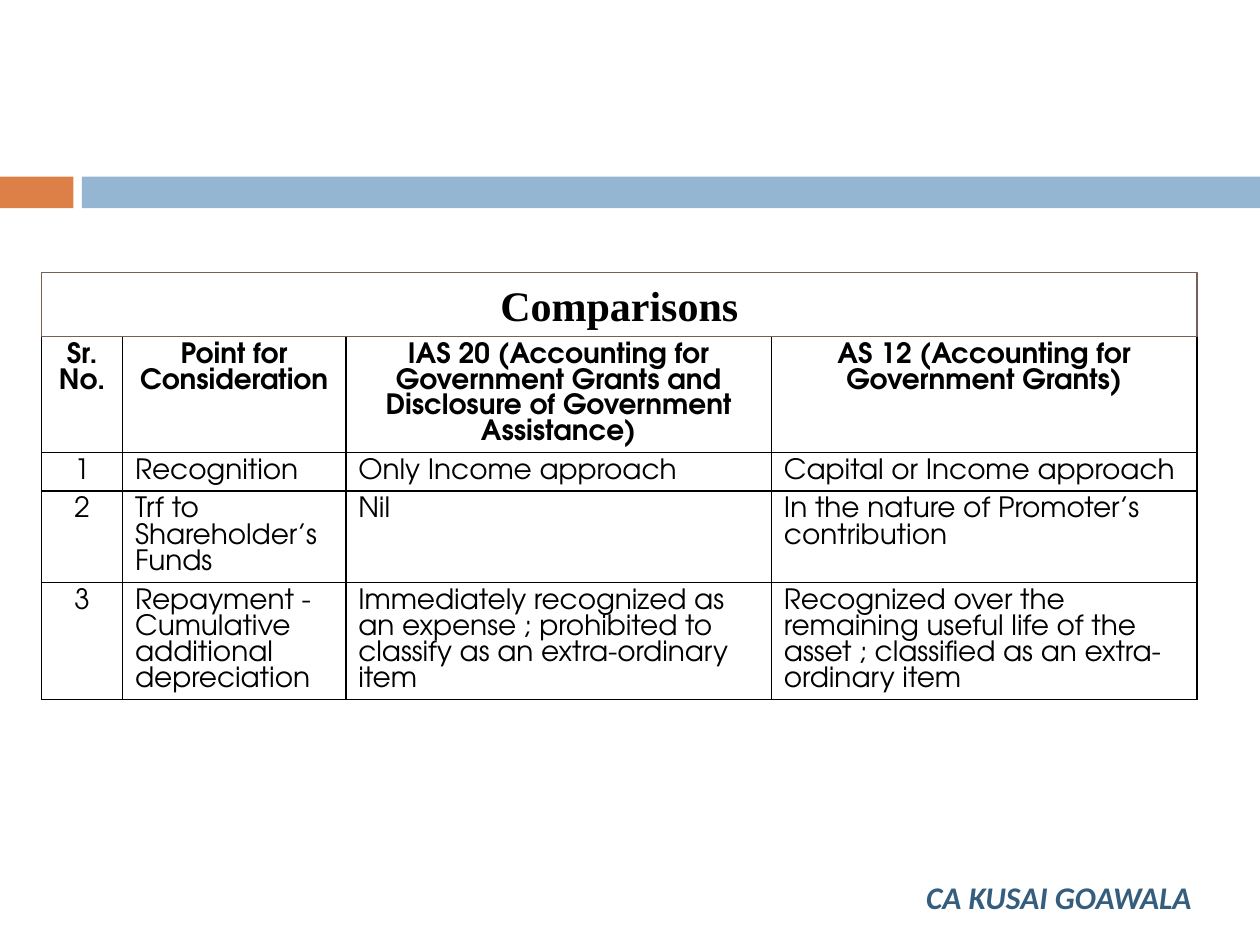
"""Build a slide comparing two standards on government grants."""
import dataclasses

import lxml.etree
import pptx
import pptx.dml.color
import pptx.enum.shapes
import pptx.enum.text
import pptx.oxml.ns
import pptx.util

Cm = pptx.util.Cm
Pt = pptx.util.Pt
ALIGN = pptx.enum.text.PP_ALIGN


@dataclasses.dataclass(frozen=True)
class Theme:
    orange: str = "DD8047"
    blue: str = "94B6D2"
    brown: str = "775F55"
    navy: str = "355D7E"
    black: str = "000000"
    head_font: str = "Times New Roman"
    grid_font: str = "TeX Gyre Adventor"
    foot_font: str = "Calibri"
    head_size: int = 24
    grid_size: int = 16
    foot_size: int = 18
    edge: float = 0.75
    rule: float = 1


def paint(code):
    return pptx.dml.color.RGBColor.from_string(code)


def write(frame, text, font, size, color, bold=False, slant=False, align=ALIGN.LEFT):
    frame.word_wrap = True
    line = frame.paragraphs[0]
    line.alignment = align
    run = line.add_run()
    run.text = text
    run.font.name = font
    run.font.size = Pt(size)
    run.font.bold = bold
    run.font.italic = slant
    run.font.color.rgb = paint(color)


class Board:
    def __init__(self, slide, theme):
        self.slide = slide
        self.theme = theme

    def rect(self, left, top, width, height, fill=None, line=None):
        shape = self.slide.shapes.add_shape(
            pptx.enum.shapes.MSO_SHAPE.RECTANGLE, Cm(left), Cm(top), Cm(width), Cm(height))
        shape.shadow.inherit = False
        if fill:
            shape.fill.solid()
            shape.fill.fore_color.rgb = paint(fill)
        else:
            shape.fill.background()
        if line:
            shape.line.color.rgb = paint(line)
            shape.line.width = Pt(self.theme.edge)
        else:
            shape.line.fill.background()
        return shape

    def label(self, left, top, width, height, text, **style):
        box = self.slide.shapes.add_textbox(Cm(left), Cm(top), Cm(width), Cm(height))
        write(box.text_frame, text, **style)

    def border(self, cell):
        props = cell._tc.get_or_add_tcPr()
        for side in ("lnL", "lnR", "lnT", "lnB"):
            line = lxml.etree.SubElement(
                props, pptx.oxml.ns.qn(f"a:{side}"), w=str(Pt(self.theme.rule)))
            fill = lxml.etree.SubElement(line, pptx.oxml.ns.qn("a:solidFill"))
            lxml.etree.SubElement(fill, pptx.oxml.ns.qn("a:srgbClr"), val=self.theme.black)

    def grid(self, left, top, widths, heights, rows):
        theme = self.theme
        table = self.slide.shapes.add_table(
            len(rows), len(widths), Cm(left), Cm(top), Cm(sum(widths)), Cm(sum(heights))).table
        for col, width in zip(table.columns, widths):
            col.width = Cm(width)
        for r, (row, height) in enumerate(zip(rows, heights)):
            table.rows[r].height = Cm(height)
            for c, text in enumerate(row):
                cell = table.cell(r, c)
                self.border(cell)
                cell.fill.background()
                write(cell.text_frame, text, font=theme.grid_font, size=theme.grid_size,
                      color=theme.black, bold=r == 0,
                      align=ALIGN.CENTER if r == 0 or c == 0 else ALIGN.LEFT)


ROWS = [
    ("Sr. No.", "Point for Consideration",
     "IAS 20 (Accounting for Government Grants and Disclosure of Government Assistance)",
     "AS 12 (Accounting for Government Grants)"),
    ("1", "Recognition", "Only Income approach", "Capital or Income approach"),
    ("2", "Trf to Shareholder’s Funds", "Nil", "In the nature of Promoter’s contribution"),
    ("3", "Repayment - Cumulative additional depreciation",
     "Immediately recognized as an expense ; prohibited to classify as an extra-ordinary item",
     "Recognized over the remaining useful life of the asset ; classified as an extra-ordinary item"),
]


def main():
    deck = pptx.Presentation()
    deck.slide_width, deck.slide_height = Cm(25.4), Cm(19.05)
    theme = Theme()
    board = Board(deck.slides.add_slide(deck.slide_layouts[6]), theme)

    board.rect(0, 3.56, 1.48, 0.64, fill=theme.orange)
    board.rect(1.65, 3.56, 23.75, 0.64, fill=theme.blue)

    left, widths = 0.84, (1.63, 4.5, 8.58, 8.58)
    board.grid(left, 6.78, widths, (2.34, 0.78, 1.84, 2.36), ROWS)
    title = board.rect(left, 5.5, sum(widths), 1.28, line=theme.brown)
    write(title.text_frame, "Comparisons", font=theme.head_font, size=theme.head_size,
          color=theme.black, bold=True, align=ALIGN.CENTER)
    board.label(18.42, 17.58, 6.55, 1.02, "CA KUSAI GOAWALA", font=theme.foot_font,
                size=theme.foot_size, color=theme.navy, bold=True, slant=True)
    deck.save("out.pptx")


if __name__ == "__main__":
    main()
